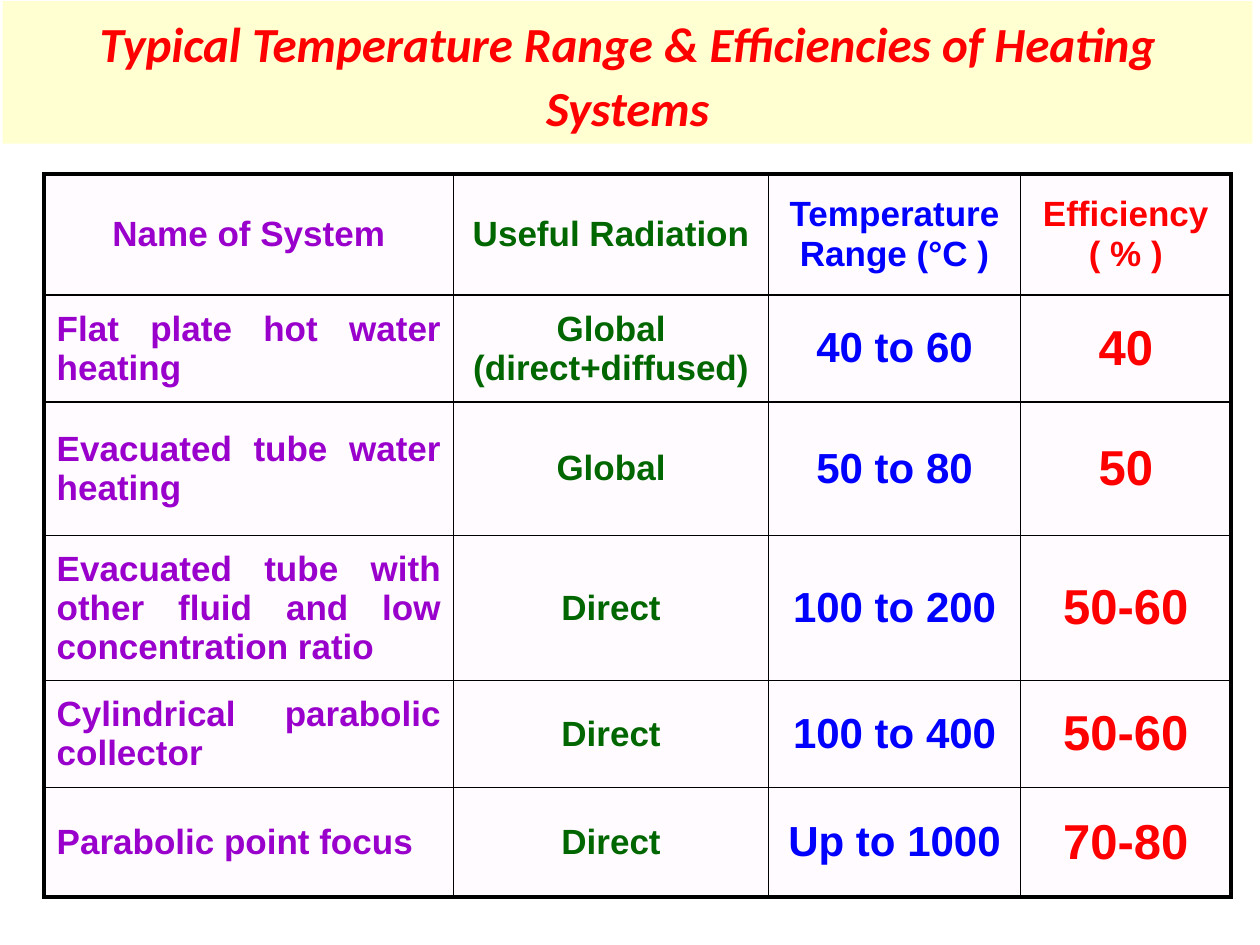
"""Build a slide with a table of heating systems, their heat range and yield."""
from dataclasses import dataclass
from typing import Any, NamedTuple

from lxml.etree import SubElement as Sub
from pptx import Presentation as Deck
from pptx.dml.color import RGBColor as Rgb
from pptx.enum.shapes import MSO_SHAPE as Shape
from pptx.enum.text import MSO_ANCHOR as Anchor, PP_ALIGN as Align
from pptx.oxml.ns import qn
from pptx.util import Inches, Pt


@dataclass(frozen=True)
class Theme:
    banner: str = "FFFFD1"
    paper: str = "FFFBFF"
    line: str = "000000"
    red: str = "FF0000"
    purple: str = "9900CC"
    green: str = "006600"
    blue: str = "0000FF"
    title: int = 28
    head: int = 20
    range: int = 24
    yields: int = 28
    thin: float = 1
    thick: float = 2.25
    title_font: str = "Calibri"
    body_font: str = "Arial"


class Column(NamedTuple):
    head: str
    width: float
    color: str
    size: int
    align: Any = Align.CENTER


class Row(NamedTuple):
    height: float
    texts: tuple[str, ...]


THEME = Theme()
TITLE = "Typical Temperature Range & Efficiencies of Heating Systems"
COLUMNS = [
    Column("Name of System", 3.25, THEME.purple, THEME.head, Align.JUSTIFY),
    Column("Useful Radiation", 2.5, THEME.green, THEME.head),
    Column("Temperature Range (°C )", 2, THEME.blue, THEME.range),
    Column("Efficiency ( % )", 1.67, THEME.red, THEME.yields),
]
ROWS = [
    Row(0.96, tuple(col.head for col in COLUMNS)),
    Row(0.85, ("Flat plate hot water heating", "Global (direct+diffused)", "40 to 60", "40")),
    Row(1.06, ("Evacuated tube water heating", "Global", "50 to 80", "50")),
    Row(1.15, ("Evacuated tube with other fluid and low concentration ratio",
               "Direct", "100 to 200", "50-60")),
    Row(0.85, ("Cylindrical parabolic collector", "Direct", "100 to 400", "50-60")),
    Row(0.87, ("Parabolic point focus", "Direct", "Up to 1000", "70-80")),
]


def write(frame: Any, text: str, align: Any, color: str, style: dict[str, Any]) -> None:
    """Put one styled paragraph into a text frame."""
    para = frame.paragraphs[0]
    para.alignment = align
    run = para.add_run()
    run.text = text
    for name, value in style.items():
        setattr(run.font, name, value)
    run.font.color.rgb = Rgb.from_string(color)


def edge(cell: Any, side: str, width: float) -> None:
    """Draw one border of a cell."""
    line = Sub(cell._tc.get_or_add_tcPr(), qn(f"a:ln{side}"), w=str(Pt(width)))
    fill = Sub(line, qn("a:solidFill"))
    Sub(fill, qn("a:srgbClr"), val=THEME.line)


def paint(target: Any, color: str) -> None:
    """Give a shape or cell a solid fill."""
    target.fill.solid()
    target.fill.fore_color.rgb = Rgb.from_string(color)


def add_title(slide: Any) -> None:
    """Add the title banner."""
    box = slide.shapes.add_shape(
        Shape.RECTANGLE, Inches(0.02), Inches(0.01), Inches(9.92), Inches(1.13))
    box.shadow.inherit = False
    paint(box, THEME.banner)
    box.line.fill.background()
    frame = box.text_frame
    frame.word_wrap = True
    frame.vertical_anchor = Anchor.TOP
    frame.paragraphs[0].line_spacing = 1.1
    write(frame, TITLE, Align.CENTER, THEME.red,
          {"name": THEME.title_font, "size": Pt(THEME.title), "bold": True, "italic": True})


def add_grid(slide: Any) -> None:
    """Add the table with a thick frame and thin inner lines."""
    wide = sum(col.width for col in COLUMNS)
    high = sum(row.height for row in ROWS)
    table = slide.shapes.add_table(
        len(ROWS), len(COLUMNS), Inches(0.35), Inches(1.38), Inches(wide), Inches(high)).table
    table.horz_banding = False
    for x, col in enumerate(COLUMNS):
        table.columns[x].width = Inches(col.width)
    for y, row in enumerate(ROWS):
        table.rows[y].height = Inches(row.height)
        for x, (col, text) in enumerate(zip(COLUMNS, row.texts)):
            cell = table.cell(y, x)
            outer = {"L": x == 0, "R": x == len(COLUMNS) - 1,
                     "T": y == 0, "B": y == len(ROWS) - 1}
            for side, thick in outer.items():
                edge(cell, side, THEME.thick if thick else THEME.thin)
            paint(cell, THEME.paper)
            cell.vertical_anchor = Anchor.MIDDLE
            size = col.size if y else THEME.head
            write(cell.text_frame, text, col.align if y else Align.CENTER, col.color,
                  {"name": THEME.body_font, "size": Pt(size), "bold": True})


def main() -> None:
    """Build and save the slide."""
    deck = Deck()
    deck.slide_width, deck.slide_height = Inches(10), Inches(7.5)
    slide = deck.slides.add_slide(deck.slide_layouts[6])
    add_title(slide)
    add_grid(slide)
    deck.save("out.pptx")


if __name__ == "__main__":
    main()
